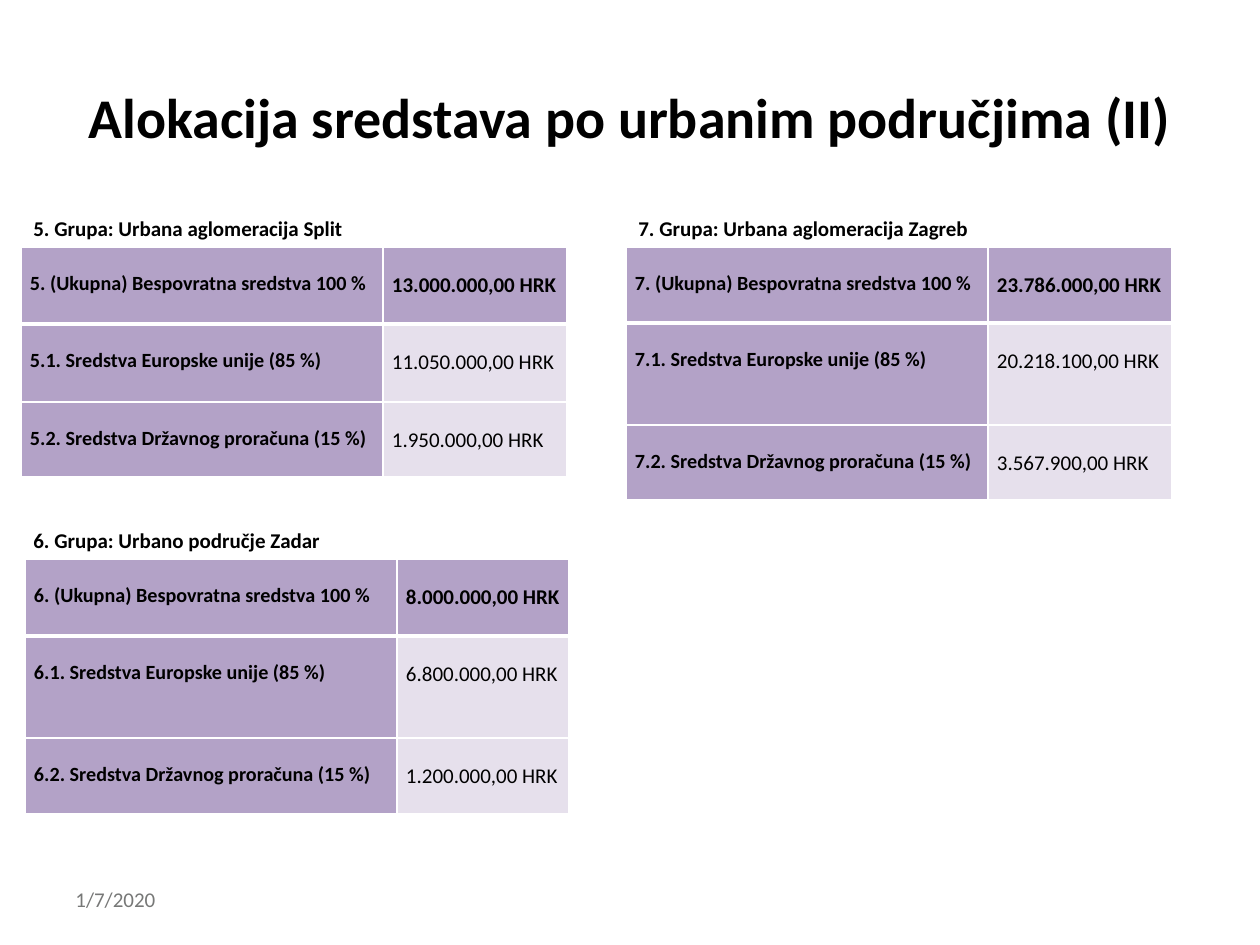
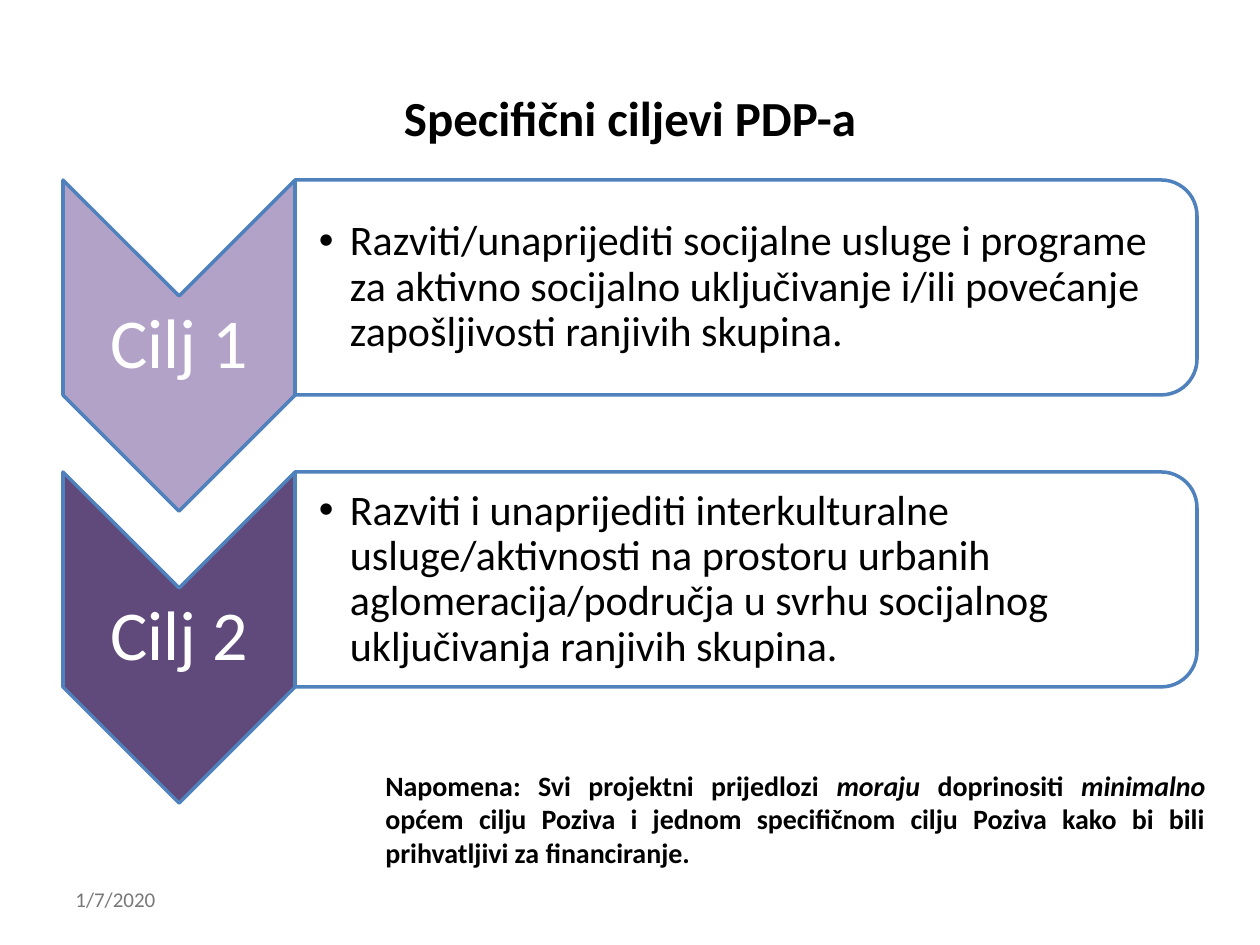
from lxml import etree
from pptx import Presentation
from pptx.dml.color import RGBColor
from pptx.enum.shapes import MSO_SHAPE as SHAPE
from pptx.enum.text import MSO_ANCHOR as ANCHOR, PP_ALIGN as ALIGN
from pptx.oxml.ns import qn
from pptx.util import Emu, Pt

# Content
DATE = "1/7/2020"
ALLOCATION_TITLE = "Alokacija sredstava po urbanim područjima (II)"
GOALS_TITLE = "Specifični ciljevi PDP-a"
ROW_LABELS = [
    "(Ukupna) Bespovratna sredstva 100 %",
    "1. Sredstva Europske unije (85 %)",
    "2. Sredstva Državnog proračuna (15 %)",
]
# Places are in px: caption left, table left, table top
GROUPS = [
    dict(number=5, name="Urbana aglomeracija Split", place=(21, 21, 247),
         cols=(362, 184), rows=(77, 78, 75),
         amounts=("13.000.000,00", "11.050.000,00", "1.950.000,00")),
    dict(number=6, name="Urbano područje Zadar", place=(21, 25, 559),
         cols=(372, 172), rows=(77, 102, 76),
         amounts=("8.000.000,00", "6.800.000,00", "1.200.000,00")),
    dict(number=7, name="Urbana aglomeracija Zagreb", place=(626, 626, 247),
         cols=(362, 184), rows=(76, 102, 75),
         amounts=("23.786.000,00", "20.218.100,00", "3.567.900,00")),
]
GOALS = [
    ("Cilj 1", "lilac",
     "Razviti/unaprijediti socijalne usluge i programe za aktivno socijalno "
     "uključivanje i/ili povećanje zapošljivosti ranjivih skupina."),
    ("Cilj 2", "violet",
     "Razviti i unaprijediti interkulturalne usluge/aktivnosti na prostoru urbanih "
     "aglomeracija/područja u svrhu socijalnog uključivanja ranjivih skupina."),
]
# Text and whether it is italic
NOTE = [
    ("Napomena: Svi projektni prijedlozi ", False),
    ("moraju", True),
    (" doprinositi ", False),
    ("minimalno", True),
    (" općem cilju Poziva i jednom specifičnom cilju Poziva kako bi bili "
     "prihvatljivi za financiranje.", False),
]

# Shared look
COLORS = dict(black="000000", white="FFFFFF", gray="777877", lilac="B3A2C7",
              pale="E6E0EC", violet="604A7B", blue="4F81BD")
FONT = "Calibri"
PX_PER_INCH = 126
CAPTION_H = 37
CELL_PAD = 9


def px(n):
    return Emu(round(n * 914400 / PX_PER_INCH))


def rgb(name):
    return RGBColor.from_string(COLORS[name])


def set_font(font, color="black", **fmt):
    font.color.rgb = rgb(color)
    for key, value in dict(name=FONT, **fmt).items():
        setattr(font, key, value)


def set_margins(tf, left, top, right, bottom):
    for side, n in zip(("left", "top", "right", "bottom"), (left, top, right, bottom)):
        setattr(tf, f"margin_{side}", px(n))


def add_text(s, box, runs, align=ALIGN.LEFT, anchor=ANCHOR.TOP, margins=None, **fmt):
    """Add a one-paragraph box; runs is a string or (text, italic) pairs."""
    tf = s.shapes.add_textbox(*map(px, box)).text_frame
    tf.word_wrap, tf.vertical_anchor = True, anchor
    if margins:
        set_margins(tf, *margins)
    p = tf.paragraphs[0]
    p.alignment = align
    for text, italic in [(runs, False)] if isinstance(runs, str) else runs:
        r = p.add_run()
        r.text = text
        set_font(r.font, italic=italic, **fmt)
    return p


def add_slide(prs, title, size):
    s = prs.slides.add_slide(prs.slide_layouts[6])
    add_text(s, (63, 880, 294, 50), DATE, size=Pt(12), color="gray")
    add_text(s, (63, 38, 1134, 157), title, ALIGN.CENTER, ANCHOR.MIDDLE,
             size=Pt(size), bold=True)
    return s


# Tables
def set_borders(cell, widths):
    tc_pr = cell._tc.get_or_add_tcPr()
    for i, (side, width) in enumerate(widths.items()):
        ln = etree.Element(qn(f"a:ln{side}"), w=str(Pt(width)))
        fill = etree.SubElement(ln, qn("a:solidFill"))
        etree.SubElement(fill, qn("a:srgbClr"), val=COLORS["white"])
        tc_pr.insert(i, ln)


def fill_cell(cell, text, color, top, **fmt):
    cell.fill.solid()
    cell.fill.fore_color.rgb = rgb(color)
    cell.vertical_anchor = ANCHOR.TOP
    set_margins(cell, CELL_PAD, top, CELL_PAD, 0)
    r = cell.text_frame.paragraphs[0].add_run()
    r.text = text
    set_font(r.font, **fmt)


def add_group(s, number, name, place, cols, rows, amounts):
    caption_x, x, y = place
    add_text(s, (caption_x, y - CAPTION_H, 404, CAPTION_H), f"{number}. Grupa: {name}",
             anchor=ANCHOR.MIDDLE, size=Pt(12), bold=True)
    table = s.shapes.add_table(len(rows), len(cols), px(x), px(y),
                               px(sum(cols)), px(sum(rows))).table
    table.first_row = table.horz_banding = False
    for col, w in zip(table.columns, cols):
        col.width = px(w)
    for i, (row, h, label, amount) in enumerate(zip(table.rows, rows, ROW_LABELS, amounts)):
        row.height = px(h)
        is_total = i == 0
        label_cell, amount_cell = row.cells
        fill_cell(label_cell, f"{number}. {label}" if is_total else f"{number}.{label}",
                  "lilac", 24, size=Pt(11.5), bold=True)
        fill_cell(amount_cell, f"{amount} HRK", "lilac" if is_total else "pale",
                  26, size=Pt(12), bold=is_total)
        for cell in row.cells:
            set_borders(cell, dict(L=1, R=1, T=3 if i == 1 else 1, B=3 if is_total else 1))


# Goals
def add_turned(s, kind, box, color):
    """Add a shape turned by 90 degrees that covers box once turned."""
    x, y, w, h = box
    shift = (w - h) / 2
    shape = s.shapes.add_shape(kind, *map(px, (x + shift, y - shift, h, w)))
    shape.rotation = 90
    shape.shadow.inherit = False
    shape.fill.solid()
    shape.fill.fore_color.rgb = rgb(color)
    shape.line.color.rgb = rgb("blue")
    shape.line.width = Pt(2)


def add_bullet(p, indent):
    p_pr = p._p.get_or_add_pPr()
    p_pr.set("marL", str(px(indent)))
    p_pr.set("indent", str(-px(indent)))
    etree.SubElement(p_pr, qn("a:buFont"), typeface="Arial")
    etree.SubElement(p_pr, qn("a:buChar"), char="•")


def add_goal(s, y, label, color, text):
    x, arrow_w, arrow_h, body_w, body_h = 63, 232, 331, 902, 215
    body_x = x + arrow_w
    add_turned(s, SHAPE.CHEVRON, (x, y, arrow_w, arrow_h), color)
    add_text(s, (x, y + arrow_w / 2, arrow_w, 100), label, ALIGN.CENTER, ANCHOR.MIDDLE,
             (4, 4, 4, 4), size=Pt(40), color="white").line_spacing = 0.9
    add_turned(s, SHAPE.ROUND_2_SAME_RECTANGLE, (body_x, y, body_w, body_h), "white")
    p = add_text(s, (body_x, y + 10, body_w - 10, body_h - 20), text,
                 anchor=ANCHOR.MIDDLE, margins=(24, 2, 2, 2), size=Pt(24))
    p.line_spacing = 0.9
    add_bullet(p, 31)


def main():
    prs = Presentation()
    prs.slide_width, prs.slide_height = px(1260), px(945)

    # Allocation by urban area
    s = add_slide(prs, ALLOCATION_TITLE, 32)
    for group in GROUPS:
        add_group(s, **group)

    # Specific goals
    s = add_slide(prs, GOALS_TITLE, 28)
    for i, goal in enumerate(GOALS):
        add_goal(s, 180 + 292 * i, *goal)
    add_text(s, (373, 762, 845, 115), NOTE, ALIGN.JUSTIFY, size=Pt(16), bold=True)

    prs.save("out.pptx")


if __name__ == "__main__":
    main()
